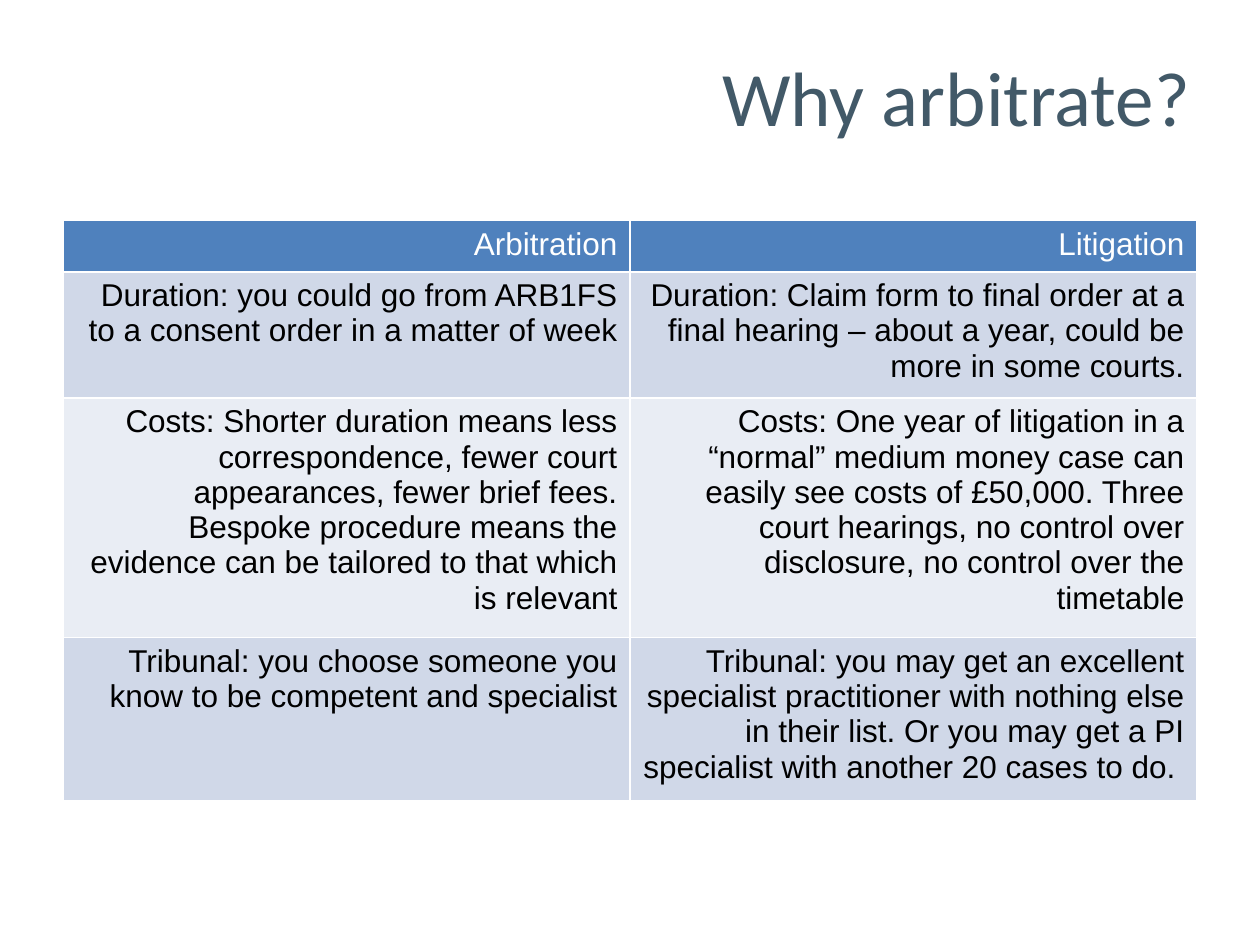
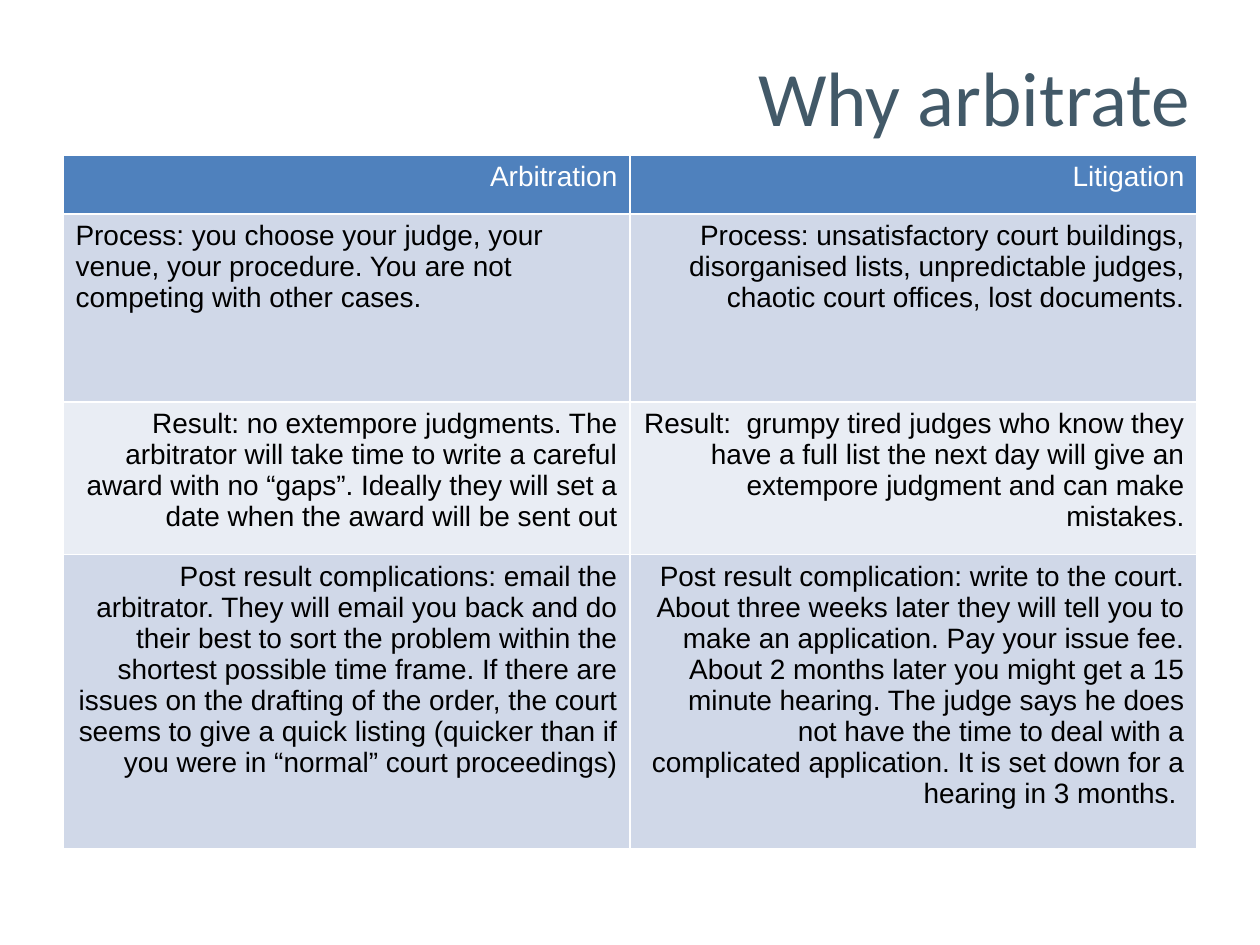
"""Build two slides that compare arbitration with litigation."""
from dataclasses import dataclass

from lxml import etree
from pptx import Presentation
from pptx import util as u
from pptx.dml.color import RGBColor
from pptx.enum import text
from pptx.oxml import ns

COLORS = {
    "title": "425968",
    "header": "4F81BD",
    "band_dark": "D0D8E8",
    "band_light": "E9EDF4",
    "white": "FFFFFF",
    "black": "000000",
}
LEFT, WIDTH = u.Cm(1.27), u.Cm(22.86)
TITLE_TOP, TITLE_HEIGHT = u.Cm(0.76), u.Cm(2.36)
TITLE_INSET = u.Cm(0.13)
HEADINGS = ("Arbitration", "Litigation")


@dataclass(frozen=True)
class Comparison:
    title: str
    top: float
    size: int
    heights: tuple[float, ...]
    rows: tuple[tuple[str, str], ...]
    left_cells: tuple[tuple[int, int], ...] = ()


COMPARISONS = (
    Comparison(
        "Why arbitrate?", 4.45, 18, (1.03, 2.38, 4.53, 3.08),
        (
            ("Duration: you could go from ARB1FS to a consent order in a matter of week",
             "Duration: Claim form to final order at a final hearing – about a year, "
             "could be more in some courts."),
            ("Costs: Shorter duration means less correspondence, fewer court appearances, "
             "fewer brief fees. Bespoke procedure means the evidence can be tailored to "
             "that which is relevant",
             "Costs: One year of litigation in a “normal” medium money case can easily see "
             "costs of £50,000. Three court hearings, no control over disclosure, "
             "no control over the timetable"),
            ("Tribunal: you choose someone you know to be competent and specialist",
             "Tribunal: you may get an excellent specialist practitioner with nothing else "
             "in their list. Or you may get a PI specialist with another 20 cases to do. "),
        ),
    ),
    Comparison(
        "Why arbitrate", 3.12, 16, (1.19, 3.79, 3.08, 5.93),
        (
            ("Process: you choose your judge, your venue, your procedure. "
             "You are not competing with other cases.",
             "Process: unsatisfactory court buildings, disorganised lists, unpredictable "
             "judges, chaotic court offices, lost documents."),
            ("Result: no extempore judgments. The arbitrator will take time to write a "
             "careful award with no “gaps”. Ideally they will set a date when the award "
             "will be sent out",
             "Result:  grumpy tired judges who know they have a full list the next day "
             "will give an extempore judgment and can make mistakes."),
            ("Post result complications: email the arbitrator. They will email you back "
             "and do their best to sort the problem within the shortest possible time "
             "frame. If there are issues on the drafting of the order, the court seems to "
             "give a quick listing (quicker than if you were in “normal” court proceedings)",
             "Post result complication: write to the court. About three weeks later they "
             "will tell you to make an application. Pay your issue fee. About 2 months "
             "later you might get a 15 minute hearing. The judge says he does not have the "
             "time to deal with a complicated application. It is set down for a hearing "
             "in 3 months. "),
        ),
        left_cells=((1, 0),),
    ),
)


def rgb(name: str) -> RGBColor:
    return RGBColor.from_string(COLORS[name])


def write(tf, content: str, *, size: int, color: str, font: str = "Arial",
          align=text.PP_ALIGN.RIGHT) -> None:
    p = tf.paragraphs[0]
    p.alignment = align
    r = p.add_run()
    r.text = content
    r.font.name = font
    r.font.size = u.Pt(size)
    r.font.bold = False
    r.font.color.rgb = rgb(color)


def add_borders(cell, color: str = "white", width: float = 1) -> None:
    tc_pr = cell._tc.get_or_add_tcPr()
    for side in "LRTB":
        ln = etree.SubElement(tc_pr, ns.qn(f"a:ln{side}"), w=str(u.Pt(width)))
        fill = etree.SubElement(ln, ns.qn("a:solidFill"))
        etree.SubElement(fill, ns.qn("a:srgbClr"), val=COLORS[color])


def add_title(s, title: str) -> None:
    tf = s.shapes.add_textbox(LEFT, TITLE_TOP, WIDTH, TITLE_HEIGHT).text_frame
    tf.word_wrap = True
    tf.vertical_anchor = text.MSO_ANCHOR.MIDDLE
    tf.margin_left = tf.margin_right = tf.margin_top = tf.margin_bottom = TITLE_INSET
    write(tf, title, size=44, color="title", font="Calibri")


def add_comparison_table(s, item: Comparison) -> None:
    rows = (HEADINGS, *item.rows)
    table = s.shapes.add_table(len(rows), len(HEADINGS), LEFT, u.Cm(item.top),
                               WIDTH, u.Cm(sum(item.heights))).table
    table.first_row = table.horz_banding = False
    for i, (row, height) in enumerate(zip(rows, item.heights)):
        table.rows[i].height = u.Cm(height)
        band = "header" if i == 0 else "band_dark" if i % 2 else "band_light"
        for j, content in enumerate(row):
            cell = table.cell(i, j)
            add_borders(cell)
            cell.fill.solid()
            cell.fill.fore_color.rgb = rgb(band)
            is_left = (i, j) in item.left_cells
            write(cell.text_frame, content, size=item.size,
                  color="black" if i else "white",
                  align=text.PP_ALIGN.LEFT if is_left else text.PP_ALIGN.RIGHT)


def main() -> None:
    prs = Presentation()
    prs.slide_width, prs.slide_height = u.Cm(25.4), u.Cm(19.05)
    for item in COMPARISONS:
        s = prs.slides.add_slide(prs.slide_layouts[6])
        add_title(s, item.title)
        add_comparison_table(s, item)
    prs.save("out.pptx")


if __name__ == "__main__":
    main()
